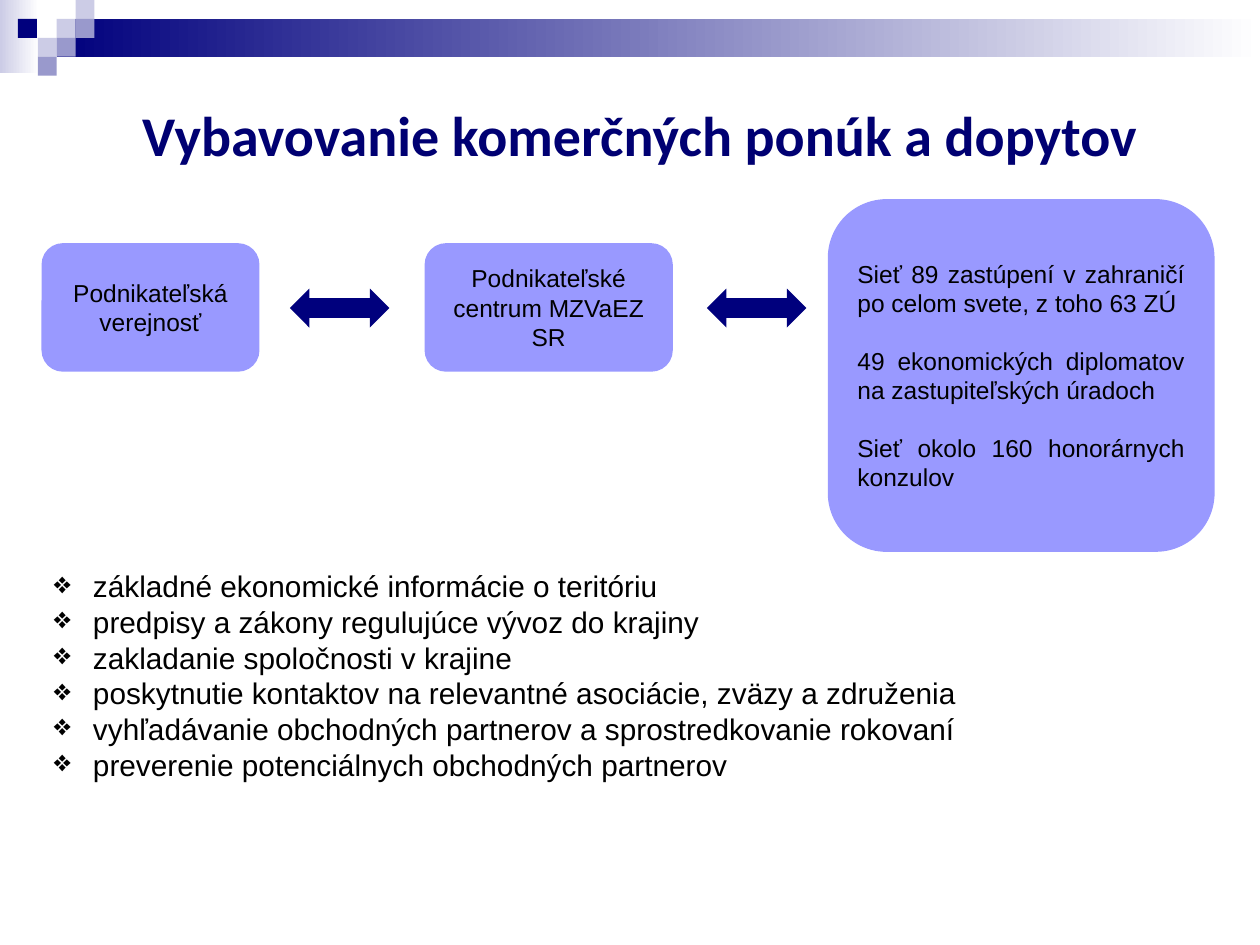
from typing import NamedTuple

from lxml.etree import SubElement
from pptx import Presentation
from pptx.dml.color import RGBColor
from pptx.enum.shapes import MSO_SHAPE as Shape
from pptx.enum.text import MSO_ANCHOR as Anchor, PP_ALIGN as Align
from pptx.oxml.ns import qn
from pptx.util import Inches, Pt

WIDTH, HEIGHT = Inches(10), Inches(7.5)
NAVY, PALE, MID, LILAC = "00007D", "CCCCE6", "9999CC", "9999FF"
WHITE, BLACK, TITLE_BLUE = "FFFFFF", "000000", "000072"


class Area(NamedTuple):
    """Left, top, width and height in percent of the slide."""
    x: float
    y: float
    w: float
    h: float

    def emu(self) -> tuple:
        return (int(self.x * WIDTH / 100), int(self.y * HEIGHT / 100),
                int(self.w * WIDTH / 100), int(self.h * HEIGHT / 100))


class Tile(NamedTuple):
    col: float
    row: int
    color: str


class Box(NamedTuple):
    kind: Shape
    area: Area
    paragraphs: list
    align: Align


TILE_W, TILE_H = 1.5, 2
TILES = [Tile(3, 1, PALE), Tile(4, 0, PALE), Tile(4, 1, MID), Tile(2, 2, PALE),
         Tile(0.95, 1, NAVY), Tile(3, 2, MID), Tile(2, 3, MID)]

BOXES = [
    Box(Shape.ROUNDED_RECTANGLE, Area(3.3, 25.73, 17.3, 13.6),
        ["Podnikateľská verejnosť"], Align.CENTER),
    Box(Shape.FLOWCHART_ALTERNATE_PROCESS, Area(33.7, 25.73, 19.7, 13.6),
        ["Podnikateľské centrum MZVaEZ SR"], Align.CENTER),
    Box(Shape.ROUNDED_RECTANGLE, Area(65.7, 21.07, 30.7, 37.33),
        ["Sieť 89 zastúpení v zahraničí po celom svete, z toho 63 ZÚ",
         "49 ekonomických diplomatov na zastupiteľských úradoch",
         "Sieť okolo 160 honorárnych konzulov"], Align.JUSTIFY),
]
ARROW_LEFTS = [23, 56.1]

SERVICES = [
    "základné ekonomické informácie o teritóriu",
    "predpisy a zákony regulujúce vývoz do krajiny",
    "zakladanie spoločnosti v krajine",
    "poskytnutie kontaktov na relevantné asociácie, zväzy a združenia",
    "vyhľadávanie obchodných partnerov a sprostredkovanie rokovaní",
    "preverenie potenciálnych obchodných partnerov",
]


def rgb(color: str) -> RGBColor:
    return RGBColor.from_string(color)


def add_block(s, kind: Shape, area: Area, *colors: str):
    """Add a borderless shape, solid for one colour, graded for two."""
    sp = s.shapes.add_shape(kind, *area.emu())
    sp.shadow.inherit = False
    sp.line.fill.background()
    if len(colors) == 1:
        sp.fill.solid()
        sp.fill.fore_color.rgb = rgb(colors[0])
    else:
        sp.fill.gradient()
        sp.fill.gradient_angle = 0
        for stop, color in zip(sp.fill.gradient_stops, colors):
            stop.color.rgb = rgb(color)
    return sp


def write(sp, paragraphs: list, size: float, align: Align, font: str = "Arial",
          color: str = BLACK, bold: bool = False, gap: float = 0) -> None:
    tf = sp.text_frame
    tf.word_wrap = True
    tf.text = "\n".join(paragraphs)
    for i, p in enumerate(tf.paragraphs):
        p.alignment = align
        p.space_before = Pt(gap if i else 0)
        for r in p.runs:
            r.font.name, r.font.size, r.font.bold = font, Pt(size), bold
            r.font.color.rgb = rgb(color)


def add_bullet(p, symbol: str, indent: float) -> None:
    pPr = p._p.get_or_add_pPr()
    pPr.set("marL", str(Inches(indent)))
    pPr.set("indent", str(-Inches(indent)))
    SubElement(pPr, qn("a:buChar")).set("char", symbol)


def main() -> None:
    prs = Presentation()
    prs.slide_width, prs.slide_height = WIDTH, HEIGHT
    s = prs.slides.add_slide(prs.slide_layouts[6])

    # Header band and mosaic
    add_block(s, Shape.RECTANGLE, Area(0, 0, 3.1, 7.73), PALE, WHITE)
    add_block(s, Shape.RECTANGLE, Area(4.5, 2, 95.5, 4), NAVY, WHITE)
    for tile in TILES:
        area = Area(tile.col * TILE_W, tile.row * TILE_H, TILE_W, TILE_H)
        add_block(s, Shape.RECTANGLE, area, tile.color)

    # Flow of boxes and arrows
    for left in ARROW_LEFTS:
        add_block(s, Shape.LEFT_RIGHT_ARROW, Area(left, 30.53, 7.9, 4.13), NAVY)
    for box in BOXES:
        sp = add_block(s, box.kind, box.area, LILAC)
        sp.text_frame.vertical_anchor = Anchor.MIDDLE
        write(sp, box.paragraphs, 14, box.align, gap=16.1)

    # Title
    title = s.shapes.add_textbox(*Area(7.5, 10, 86.6, 11.73).emu())
    write(title, ["Vybavovanie komerčných ponúk a dopytov"], 32, Align.CENTER,
          font="Calibri", color=TITLE_BLUE, bold=True)

    # List of services
    services = s.shapes.add_textbox(*Area(3.3, 59.47, 76.6, 27.87).emu())
    write(services, SERVICES, 17, Align.LEFT)
    for p in services.text_frame.paragraphs:
        p.line_spacing = Pt(20.4)
        add_bullet(p, "❖", 0.31)

    prs.save("out.pptx")


if __name__ == "__main__":
    main()
